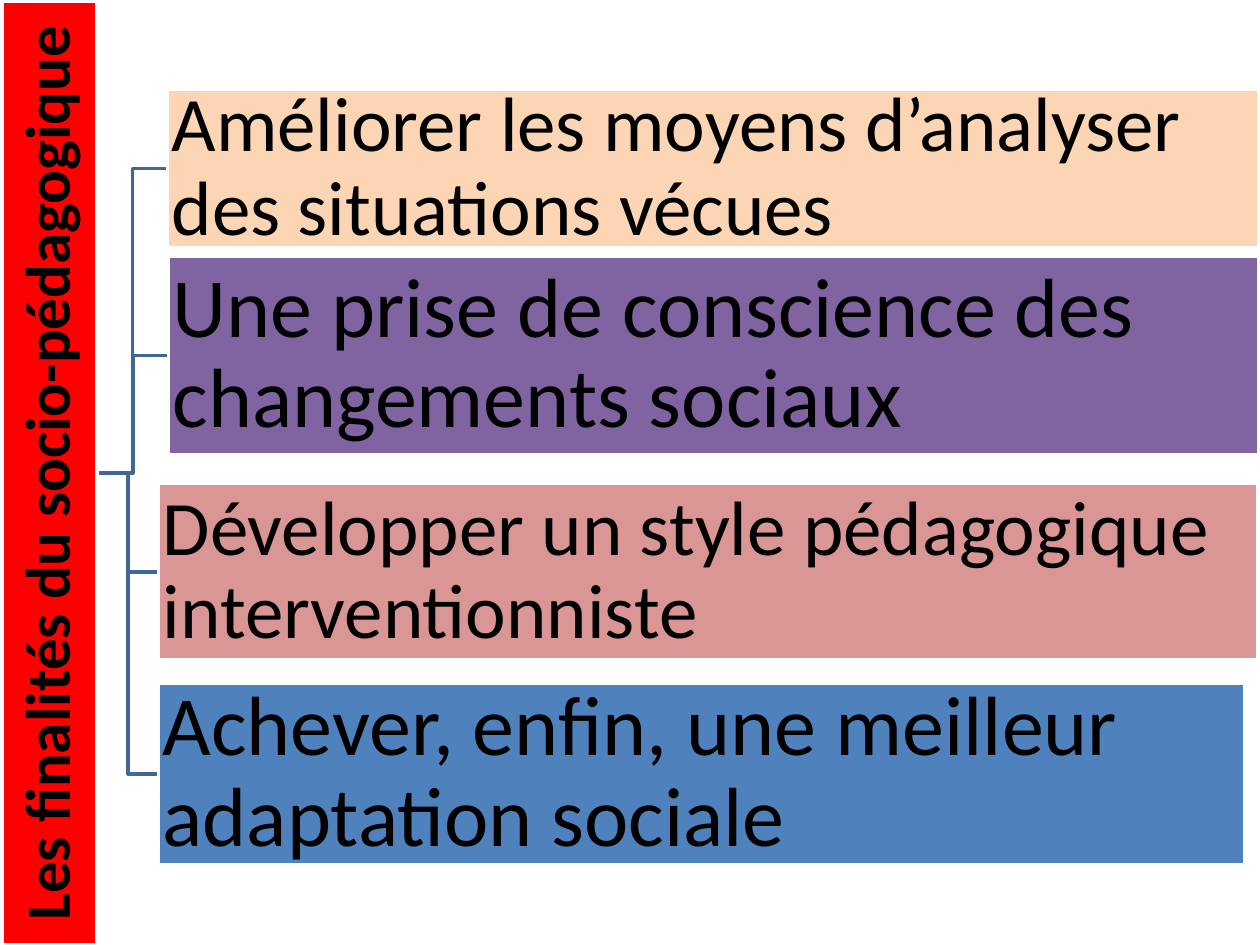
"""Build a slide linking the socio-pedagogical title to its four aims."""
from pptx import Presentation
from pptx.dml.color import RGBColor
from pptx.enum.shapes import MSO_SHAPE
from pptx.enum.text import MSO_ANCHOR, PP_ALIGN
from pptx.util import Cm, Pt

BLACK = RGBColor(0x00, 0x00, 0x00)
WHITE = RGBColor(0xFF, 0xFF, 0xFF)
RED = RGBColor(0xFF, 0x00, 0x00)
PEACH = RGBColor(0xFC, 0xD5, 0xB5)
PURPLE = RGBColor(0x80, 0x64, 0xA2)
ROSE = RGBColor(0xD9, 0x96, 0x94)
BLUE = RGBColor(0x4F, 0x81, 0xBD)
STEEL = RGBColor(0x3F, 0x67, 0x97)

TRUNK_X, TRUNK_Y = 1.96, 9.53
TITLE = "Les finalités du socio-pédagogique"
AIMS = [
    ("Améliorer les moyens d’analyser des situations vécues", 44, PEACH, (3.38, 1.8, 22, 3.2)),
    ("Une prise de conscience des changements sociaux", 48, PURPLE, (3.4, 5.16, 21.97, 4.01)),
    ("Développer un style pédagogique interventionniste", 44, ROSE, (3.2, 9.75, 22.15, 3.56)),
    ("Achever, enfin, une meilleur adaptation sociale", 48, BLUE, (3.2, 13.77, 21.89, 3.66)),
]


def apply(target, values):
    for attribute, value in values.items():
        setattr(target, attribute, value)


class AimsSlide:
    frame_format = {
        "word_wrap": True,
        "vertical_anchor": MSO_ANCHOR.MIDDLE,
        **{f"margin_{side}": Cm(0.08) for side in ("left", "top", "right", "bottom")},
    }
    font_format = {"name": "Calibri", "bold": False}
    line_width = Pt(2)

    def __init__(self, slide):
        self.slide = slide

    def outline(self, shape, color):
        shape.shadow.inherit = False
        shape.line.color.rgb = color
        shape.line.width = self.line_width

    def box(self, text, size, fill, bounds, align=PP_ALIGN.LEFT, rotation=0, **font):
        panel = self.slide.shapes.add_shape(MSO_SHAPE.RECTANGLE, *map(Cm, bounds))
        panel.rotation = rotation
        panel.fill.solid()
        panel.fill.fore_color.rgb = fill
        self.outline(panel, WHITE)
        apply(panel.text_frame, self.frame_format)
        paragraph = panel.text_frame.paragraphs[0]
        apply(paragraph, {"alignment": align, "line_spacing": 0.9})
        run = paragraph.add_run()
        run.text = text
        apply(run.font, {**self.font_format, "size": Pt(size), **font})
        run.font.color.rgb = BLACK

    def branch(self, bounds):
        left, top, _, height = bounds
        bend, middle = (TRUNK_X + left) / 2, top + height / 2
        corners = [(bend, TRUNK_Y), (bend, middle), (left, middle)]
        builder = self.slide.shapes.build_freeform(Cm(TRUNK_X), Cm(TRUNK_Y))
        builder.add_line_segments([(Cm(x), Cm(y)) for x, y in corners], close=False)
        elbow = builder.convert_to_shape()
        elbow.fill.background()
        self.outline(elbow, STEEL)


def main():
    presentation = Presentation()
    apply(presentation, {"slide_width": Cm(25.4), "slide_height": Cm(19.05)})
    aims_slide = AimsSlide(presentation.slides.add_slide(presentation.slide_layouts[6]))
    for *_, bounds in reversed(AIMS):
        aims_slide.branch(bounds)
    aims_slide.box(TITLE, 36, RED, (-8.51, 8.58, 19.02, 1.91), PP_ALIGN.CENTER, 270, bold=True)
    for aim in AIMS:
        aims_slide.box(*aim)
    presentation.save("out.pptx")


if __name__ == "__main__":
    main()
